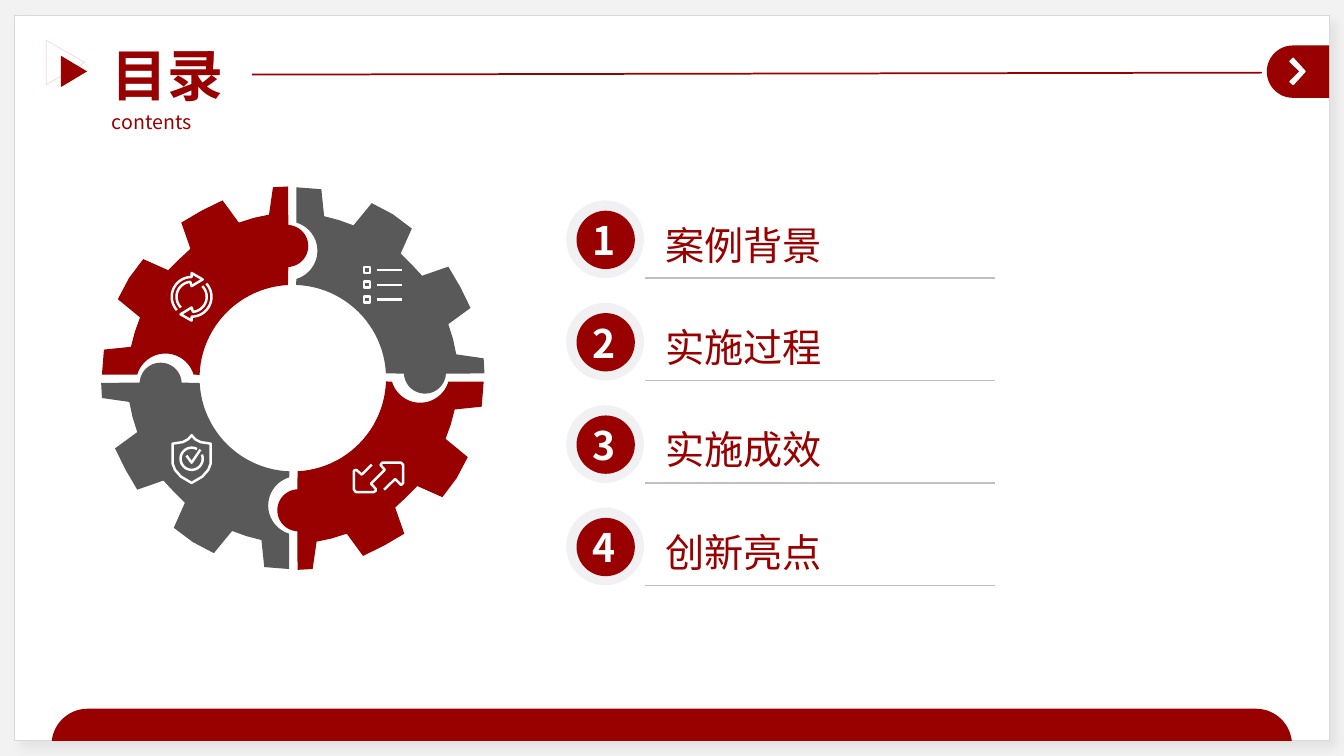
from math import cos, radians, sin

from lxml.etree import SubElement
from pptx import Presentation
from pptx.dml.color import RGBColor
from pptx.enum.shapes import MSO_CONNECTOR, MSO_SHAPE as SHAPE
from pptx.enum.text import PP_ALIGN
from pptx.oxml.ns import qn
from pptx.util import Cm, Pt

FONT = "Noto Sans CJK SC"
RED = RGBColor(0x99, 0x00, 0x00)
GREY = RGBColor(0x59, 0x59, 0x59)
NAVY = RGBColor(0x1B, 0x1D, 0x3D)
WHITE = RGBColor(0xFF, 0xFF, 0xFF)
BACKDROP = RGBColor(0xF2, 0xF2, 0xF2)
FRAME = RGBColor(0xD9, 0xD9, 0xD9)
RULE = RGBColor(0xBF, 0xBF, 0xBF)

# All lengths are centimetres.
TITLE, SUBTITLE = "目录", "contents"
ITEMS = [("案例背景", 6.43), ("实施过程", 6.43), ("实施成效", 6.43), ("创新亮点", 8.56)]
ITEM_PITCH = 2.58

GEAR_CENTRE = (7.38, 9.53)
QUARTER_COLOURS = [RED, GREY, RED, GREY]
TEETH = [(7.26, 4.70), (6.88, 4.72), (6.78, 5.41), (6.40, 5.49), (6.02, 5.61),
         (5.61, 5.05), (5.08, 5.31), (4.57, 5.61), (4.80, 6.27), (4.52, 6.53),
         (4.24, 6.81), (3.61, 6.53), (3.25, 7.01), (2.97, 7.54), (3.53, 8.00),
         (3.40, 8.36), (3.30, 8.74), (2.62, 8.81), (2.57, 9.44)]
CHEVRON = [(32.89, 1.80), (32.59, 1.47), (32.51, 1.55), (32.77, 1.80),
           (32.51, 2.06), (32.59, 2.13)]
CYCLE_CENTRE = (4.83, 7.48)
CYCLE_HEAD = [(4.83, 7.21), (5.11, 7.04), (4.83, 6.88)]
SHIELD_X = 4.83
SHIELD_HALF = [(0, 10.97), (0.09, 11.07), (0.22, 11.14), (0.48, 11.18),
               (0.48, 11.68), (0.42, 11.84), (0.27, 12.01), (0, 12.17)]
TICK = [(4.70, 11.48), (4.83, 11.66), (5.05, 11.33)]
EXPAND = [(9.68, 12.34), (9.96, 12.07), (10.11, 12.22), (10.16, 12.17), (10.16, 11.71),
          (10.11, 11.66), (9.63, 11.66), (9.59, 11.72), (9.70, 11.84), (9.35, 12.19),
          (9.47, 12.32), (9.47, 12.37), (9.42, 12.40), (8.97, 12.40), (8.92, 12.34),
          (8.92, 11.86), (8.98, 11.84), (9.12, 11.96), (9.37, 11.71)]


def arc(centre, radius, start, end, steps=24):
    """Points on a circle; angles in degrees, clockwise from the right."""
    angles = [radians(start + (end - start) * i / steps) for i in range(steps + 1)]
    return [(centre[0] + radius * cos(a), centre[1] + radius * sin(a)) for a in angles]


def rotate(points, centre, degrees):
    c, si = cos(radians(degrees)), sin(radians(degrees))
    cx, cy = centre
    return [(cx + (x - cx) * c - (y - cy) * si, cy + (x - cx) * si + (y - cy) * c)
            for x, y in points]


def paint(sp, fill=None, line=None, width=1.75, alpha=None):
    sp.shadow.inherit = False
    if fill is None:
        sp.fill.background()
    else:
        sp.fill.solid()
        sp.fill.fore_color.rgb = fill
    if line is None:
        sp.line.fill.background()
    else:
        sp.line.color.rgb = line
        sp.line.width = Pt(width)
    if alpha:
        for clr in sp._element.spPr.iter(qn("a:srgbClr")):
            SubElement(clr, qn("a:alpha"), val=str(alpha * 1000))
    return sp


def add_preset(shapes, kind, box, rotation=0, **style):
    sp = shapes.add_shape(kind, *map(Cm, box))
    sp.rotation = rotation
    return paint(sp, **style)


def add_outline(shapes, points, close=True, **style):
    pts = [(Cm(x), Cm(y)) for x, y in points]
    builder = shapes.build_freeform(*pts[0], scale=1.0)
    builder.add_line_segments(pts[1:], close=close)
    return paint(builder.convert_to_shape(), **style)


def add_line(shapes, start, end, colour, width):
    cn = shapes.add_connector(MSO_CONNECTOR.STRAIGHT, *map(Cm, start + end))
    cn.line.color.rgb = colour
    cn.line.width = Pt(width)
    SubElement(cn._element.spPr, qn("a:effectLst"))


def add_text(shapes, box, text, size, colour=RED, bold=False, align=PP_ALIGN.LEFT):
    tf = shapes.add_textbox(*map(Cm, box)).text_frame
    tf.word_wrap = True
    p = tf.paragraphs[0]
    p.text = text
    p.alignment = align
    p.font.size, p.font.bold, p.font.name = Pt(size), bold, FONT
    p.font.color.rgb = colour
    SubElement(p._p.pPr.find(qn("a:defRPr")), qn("a:ea"), typeface=FONT)


def add_backdrop(s):
    s.background.fill.solid()
    s.background.fill.fore_color.rgb = BACKDROP
    page = add_preset(s.shapes, SHAPE.RECTANGLE, (0.36, 0.38, 33.15, 18.29),
                      fill=WHITE, line=FRAME, width=0.75)
    shadow = SubElement(page._element.spPr.find(qn("a:effectLst")), qn("a:outerShdw"),
                        blurRad=str(Pt(7)), dist=str(Pt(7)), dir="2700000", algn="tl")
    clr = SubElement(shadow, qn("a:srgbClr"), val="000000")
    SubElement(clr, qn("a:alpha"), val="6000")
    bar = arc((2.21, 18.77), 0.91, 186.3, 270) + arc((31.65, 18.77), 0.91, 270, 353.7)
    add_outline(s.shapes, bar, fill=RED)
    cap = add_preset(s.shapes, SHAPE.ROUND_2_SAME_RECTANGLE, (32.05, 1.02, 1.32, 1.57),
                     rotation=270, fill=RED)
    cap.adjustments[0] = 0.5
    add_outline(s.shapes, CHEVRON, fill=WHITE, line=WHITE, width=1)


def add_heading(s):
    marks = s.shapes.add_group_shape().shapes
    add_preset(marks, SHAPE.ISOSCELES_TRIANGLE, (1.47, 1.47, 0.79, 0.66), 90, fill=RED)
    add_preset(marks, SHAPE.ISOSCELES_TRIANGLE, (1.09, 1.09, 1.12, 0.97), 90,
               line=RED, width=0.5, alpha=14)
    words = s.shapes.add_group_shape().shapes
    add_text(words, (2.57, 0.89, 3.78, 1.96), TITLE, 40, bold=True)
    add_text(words, (2.57, 2.64, 3.78, 0.86), SUBTITLE, 14)
    add_line(s.shapes, (6.35, 1.88), (31.8, 1.83), RED, 1.25)


def add_items(s):
    for i, (text, width) in enumerate(ITEMS):
        g = s.shapes.add_group_shape().shapes
        y = 5.05 + i * ITEM_PITCH
        add_text(g, (16.51, y + 0.39, width, 1.45), text, 28)
        add_preset(g, SHAPE.OVAL, (14.27, y, 1.96, 1.96), fill=NAVY, alpha=6)
        add_preset(g, SHAPE.OVAL, (14.53, y + 0.26, 1.47, 1.47), fill=RED)
        add_text(g, (14.53, y + 0.28, 1.4, 1.45), str(i + 1), 28, WHITE, True,
                 PP_ALIGN.CENTER)
        add_line(g, (16.26, y + 1.96), (25.07, y + 1.96), RULE, 1)


def add_gear(s):
    g = s.shapes.add_group_shape().shapes
    notch = arc((4.17, 9.65), 0.74, 196.5, 343.5)
    hub = arc(GEAR_CENTRE, 2.35, 182, 267)
    tab = arc((7.24, 6.2), 0.53, 87, -87)
    for i, colour in enumerate(QUARTER_COLOURS):
        quarter = rotate(notch + hub + tab + TEETH, GEAR_CENTRE, 90 * i)
        add_outline(g, quarter, fill=colour)

    cycle = arc(CYCLE_CENTRE, 0.38, 135, 265) + CYCLE_HEAD + arc(CYCLE_CENTRE, 0.5, 270, 138)
    shield = [(SHIELD_X + dx, y) for dx, y in SHIELD_HALF]
    shield += [(SHIELD_X - dx, y) for dx, y in SHIELD_HALF[-2:0:-1]]
    ring = arc((SHIELD_X, 11.56), 0.28, -22, 299)
    add_outline(g, shield, line=WHITE)
    for stroke in (cycle, rotate(cycle, CYCLE_CENTRE, 180), TICK, ring, EXPAND):
        add_outline(g, stroke, close=False, line=WHITE)
    for row in range(3):
        y = 6.81 + row * 0.37
        add_line(g, (9.5, y), (10.13, y), WHITE, 1.75)
        add_preset(g, SHAPE.RECTANGLE, (9.17, y - 0.08, 0.15, 0.15), line=WHITE)


def main():
    prs = Presentation()
    prs.slide_width, prs.slide_height = Cm(33.87), Cm(19.05)
    s = prs.slides.add_slide(prs.slide_layouts[6])
    add_backdrop(s)
    add_heading(s)
    add_items(s)
    add_gear(s)
    prs.save("out.pptx")


if __name__ == "__main__":
    main()
